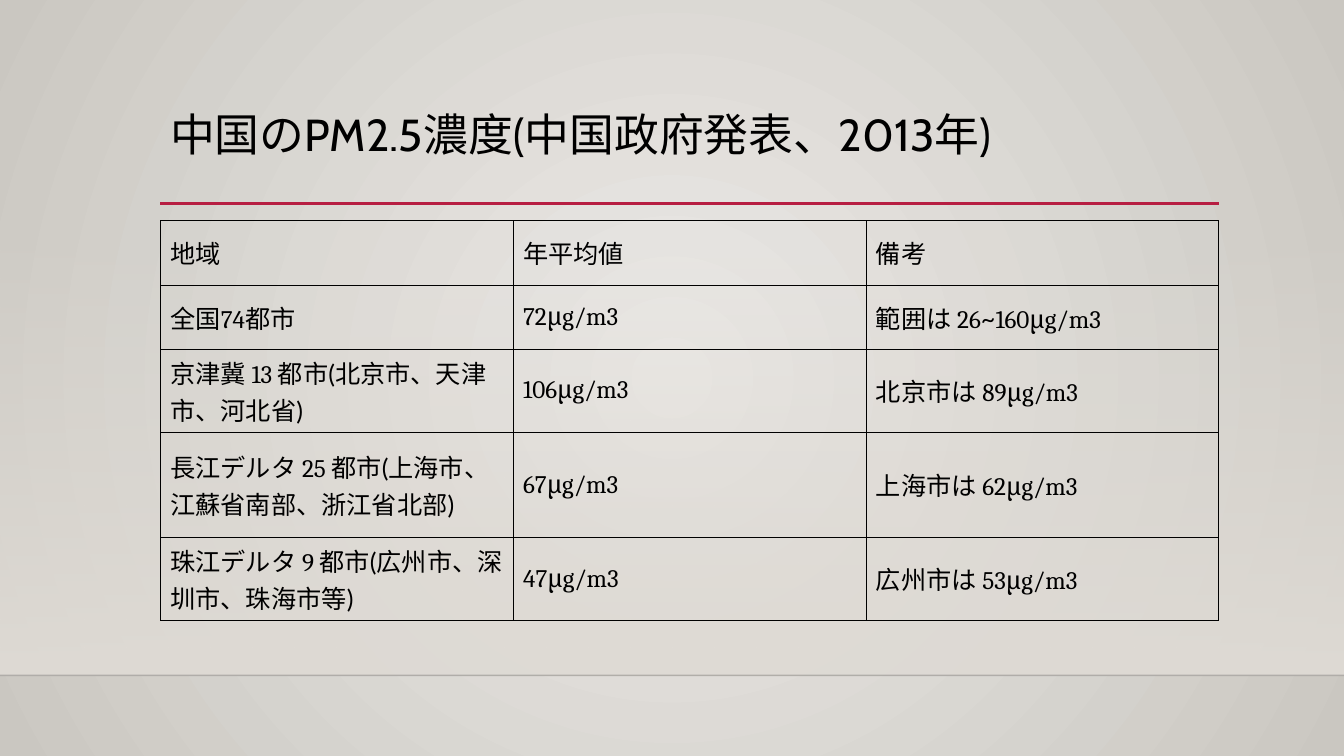
from lxml.etree import SubElement
from pptx import Presentation
from pptx.dml.color import RGBColor
from pptx.enum.shapes import MSO_CONNECTOR as CONN, MSO_SHAPE as SHAPE
from pptx.enum.text import MSO_ANCHOR as ANCHOR
from pptx.oxml.ns import qn
from pptx.util import Pt

BLACK = RGBColor(0x00, 0x00, 0x00)
EDGE = RGBColor(0x00, 0x00, 0x01)
CRIMSON = RGBColor(0xB7, 0x1E, 0x42)
WALL = RGBColor(0xDF, 0xDB, 0xD5)
GLOW = RGBColor(0xEC, 0xEA, 0xE7)
RIM = RGBColor(0xCA, 0xC7, 0xC1)

WIDTH, HEIGHT = 960, 540
LEFT, CONTENT_WIDTH = 114.5, 756
FLOOR = 482.4
BORDER = 0.48
ONE_LINE, TWO_LINES, TALL = 46, 59.4, 75
ROW_HEIGHTS = [ONE_LINE, ONE_LINE, TWO_LINES, TALL, TWO_LINES]
CELL_FONTS = ("Lato", "Cambria")

# Each "|" switches between the two cell fonts, starting with Lato.
ROWS = [
    ("地域", "年平均値", "備考"),
    ("全国|74|都市", "|72μg/m3", "範囲は |26|~|160μg/m3"),
    ("京津冀 |13 |都市(北京市、天津市、河北省)", "|106μg/m3", "北京市は |89μg/m3"),
    ("長江デルタ |25 |都市(上海市、江蘇省南部、浙江省北部)", "|67μg/m3",
     "上海市は |62μg/m3"),
    ("珠江デルタ |9 |都市(広州市、深圳市、珠海市等)", "|47μg/m3", "広州市は |53μg/m3"),
]


def set_gradient(fill, colors):
    fill.gradient()
    for stop, color in zip(fill.gradient_stops, colors):
        stop.color.rgb = color


def set_opacity(color_el, percent):
    SubElement(color_el, qn("a:alpha"), val=str(percent * 1000))


def add_background(s):
    """Radial gradient spreading from the middle of the slide."""
    set_gradient(s.background.fill, (GLOW, RIM))
    grad = s.element.find(".//" + qn("a:gradFill"))
    grad.remove(grad.find(qn("a:lin")))
    circle = SubElement(grad, qn("a:path"), path="circle")
    SubElement(circle, qn("a:fillToRect"), {side: "50000" for side in "ltrb"})


def add_wall(s):
    """Band that fades in from clear down to the floor line."""
    top = 159
    sp = s.shapes.add_shape(SHAPE.RECTANGLE, 0, Pt(top), Pt(WIDTH), Pt(FLOOR - top))
    sp.shadow.inherit = False
    sp.line.fill.background()
    set_gradient(sp.fill, (WALL, WALL))
    sp.fill.gradient_angle = 270
    set_opacity(sp._element.find(".//" + qn("a:srgbClr")), 0)


def add_rule(s, x1, x2, y, color, width):
    line = s.shapes.add_connector(CONN.STRAIGHT, Pt(x1), Pt(y), Pt(x2), Pt(y))
    line.line.color.rgb = color
    line.line.width = Pt(width)
    SubElement(line._element.spPr, qn("a:effectLst"))
    return line


def add_run(p, text, font, size):
    r = p.add_run()
    r.text = text
    for name, value in {"name": font, "size": Pt(size)}.items():
        setattr(r.font, name, value)
    r.font.color.rgb = BLACK


def add_title(s, text):
    box = s.shapes.add_textbox(Pt(LEFT), Pt(75), Pt(CONTENT_WIDTH), Pt(83))
    tf = box.text_frame
    layout = {"word_wrap": True, "vertical_anchor": ANCHOR.BOTTOM, "margin_bottom": Pt(42.5)}
    for name, value in layout.items():
        setattr(tf, name, value)
    p = tf.paragraphs[0]
    p.line_spacing = 0.9
    add_run(p, text, "Cabin", 32)


def add_borders(cell):
    tc_pr = cell._tc.get_or_add_tcPr()
    for side in "LRTB":
        ln = SubElement(tc_pr, qn(f"a:ln{side}"), w=str(Pt(BORDER)))
        fill = SubElement(ln, qn("a:solidFill"))
        SubElement(fill, qn("a:srgbClr"), val=str(BLACK))


def fill_cell(cell, text):
    add_borders(cell)
    cell.fill.background()
    cell.vertical_anchor = ANCHOR.MIDDLE
    p = cell.text_frame.paragraphs[0]
    for i, part in enumerate(text.split("|")):
        if part:
            add_run(p, part, CELL_FONTS[i % 2], 18)


def add_data_table(s, rows):
    frame = s.shapes.add_table(len(rows), len(rows[0]), Pt(LEFT), Pt(157.5),
                               Pt(CONTENT_WIDTH), Pt(sum(ROW_HEIGHTS)))
    table = frame.table
    table.first_row = table.horz_banding = False
    for row, height, texts in zip(table.rows, ROW_HEIGHTS, rows):
        row.height = Pt(height)
        for cell, text in zip(row.cells, texts):
            fill_cell(cell, text)


def main():
    prs = Presentation()
    prs.slide_width, prs.slide_height = Pt(WIDTH), Pt(HEIGHT)
    s = prs.slides.add_slide(prs.slide_layouts[6])
    add_background(s)
    add_wall(s)
    floor = add_rule(s, 0, WIDTH, FLOOR, EDGE, 1)
    set_opacity(floor._element.find(".//" + qn("a:srgbClr")), 20)
    add_rule(s, LEFT, LEFT + CONTENT_WIDTH, 145.4, CRIMSON, 2.5)
    add_title(s, "中国のPM2.5濃度(中国政府発表、2013年)")
    add_data_table(s, ROWS)
    prs.save("out.pptx")


if __name__ == "__main__":
    main()
